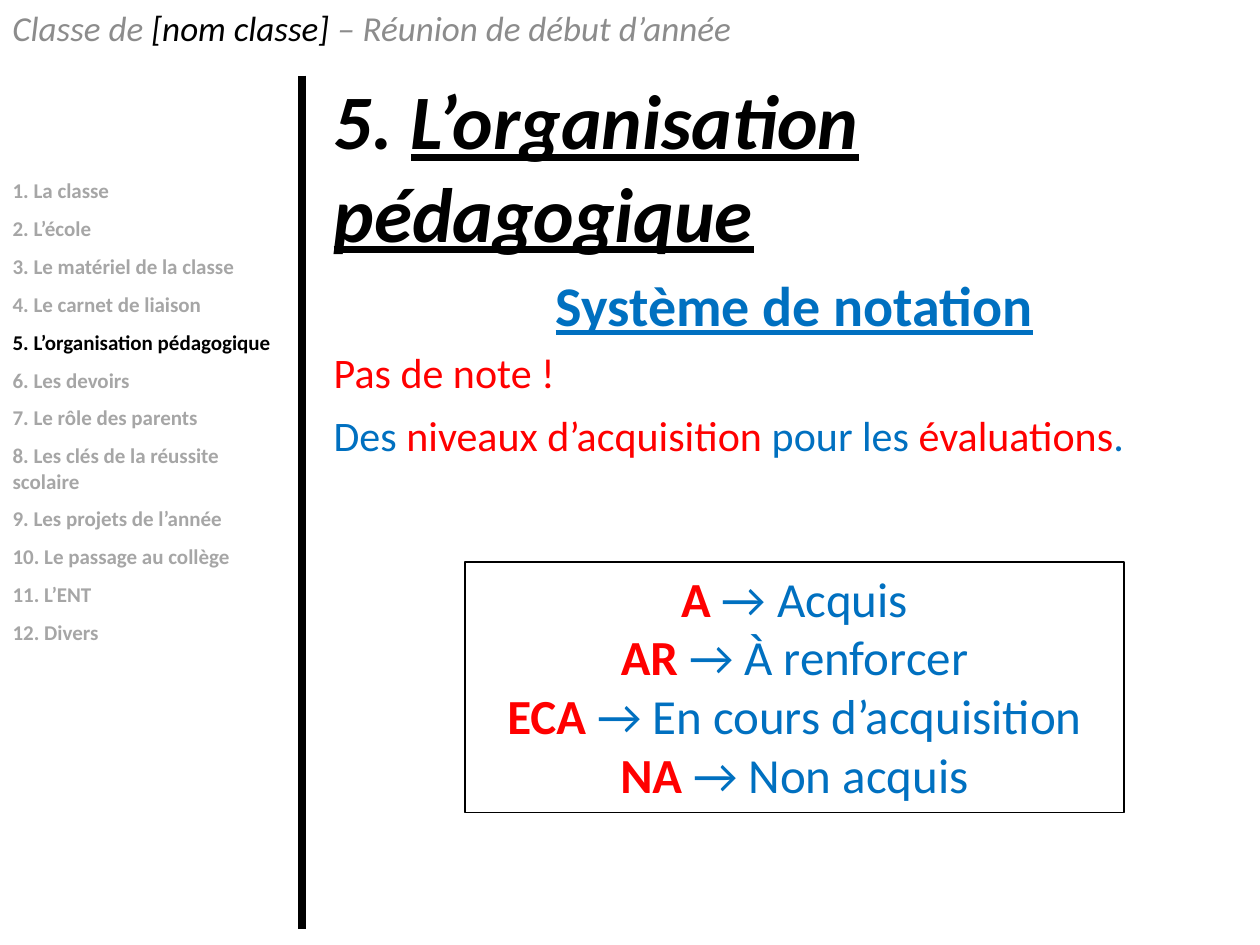
"""Builds a class meeting slide on the grading system, with a side menu."""
from dataclasses import dataclass

from lxml.etree import SubElement
from pptx import Presentation
from pptx.dml.color import RGBColor
from pptx.enum.shapes import MSO_CONNECTOR as Connector, MSO_SHAPE as Shape
from pptx.enum.text import MSO_ANCHOR as Anchor, PP_ALIGN as Align
from pptx.oxml.ns import qn
from pptx.util import Pt

BLACK = RGBColor(0x00, 0x00, 0x00)
BLUE = RGBColor(0x00, 0x70, 0xC0)
RED = RGBColor(0xFF, 0x00, 0x00)
GREY = RGBColor(0x8C, 0x8C, 0x8C)
PALE = RGBColor(0xA6, 0xA6, 0xA6)
FONT = "Calibri"

MENU = ["La classe", "L’école", "Le matériel de la classe", "Le carnet de liaison",
        "L’organisation pédagogique", "Les devoirs", "Le rôle des parents",
        "Les clés de la réussite scolaire", "Les projets de l’année",
        "Le passage au collège", "L’ENT", "Divers"]
CURRENT, TWO_LINES = 5, 8
LEVELS = [("A", "Acquis"), ("AR", "À renforcer"),
          ("ECA", "En cours d’acquisition"), ("NA", "Non acquis")]


@dataclass
class Span:
    """A stretch of text with one format."""
    text: str
    color: RGBColor = BLACK
    bold: bool = False
    italic: bool = False
    underline: bool = False


@dataclass
class Area:
    """A rectangle on the page, in points."""
    left: float
    top: float
    width: float
    height: float

    def lengths(self) -> list:
        """Return the four sides as lengths."""
        return [Pt(side) for side in (self.left, self.top, self.width, self.height)]


def write(frame, paragraphs: list[list[Span]], *, size: float, align=Align.LEFT,
          anchor=Anchor.TOP, before: float = 0) -> None:
    """Fill a text frame with formatted paragraphs."""
    frame.word_wrap = True
    frame.vertical_anchor = anchor
    for index, spans in enumerate(paragraphs):
        para = frame.add_paragraph() if index else frame.paragraphs[0]
        para.alignment = align
        para.space_before = Pt(before)
        for span in spans:
            run = para.add_run()
            run.text = span.text
            font = run.font
            font.name, font.size = FONT, Pt(size)
            font.bold, font.italic, font.underline = span.bold, span.italic, span.underline
            font.color.rgb = span.color


def add_text(page, area: Area, spans: list[Span], **style) -> None:
    """Add a one-paragraph text box."""
    box = page.shapes.add_textbox(*area.lengths())
    write(box.text_frame, [spans], **style)


def add_divider(page, x: float, top: float, bottom: float) -> None:
    """Draw the thick vertical line beside the menu."""
    line = page.shapes.add_connector(Connector.STRAIGHT, Pt(x), Pt(top), Pt(x), Pt(bottom))
    line.line.color.rgb = BLACK
    line.line.width = Pt(4.5)
    SubElement(line._element.spPr, qn("a:effectLst"))


def add_menu(page, area: Area) -> None:
    """Add the table of topics, with the current one in black."""
    table = page.shapes.add_table(len(MENU), 1, *area.lengths()).table
    table.first_row = table.horz_banding = False
    for number, topic in enumerate(MENU, 1):
        table.rows[number - 1].height = Pt(36 if number == TWO_LINES else 21.6)
        cell = table.cell(number - 1, 0)
        cell.fill.background()
        color = BLACK if number == CURRENT else PALE
        write(cell.text_frame, [[Span(f"{number}. {topic}", color, bold=True)]], size=12)
        cell.vertical_anchor = Anchor.MIDDLE


def add_levels(page, area: Area) -> None:
    """Add the framed list of grading levels."""
    box = page.shapes.add_shape(Shape.RECTANGLE, *area.lengths())
    box.shadow.inherit = False
    box.fill.background()
    box.line.color.rgb = BLACK
    box.line.width = Pt(0.75)
    lines = [[Span(code, RED, bold=True), Span(f" → {meaning}", BLUE)]
             for code, meaning in LEVELS]
    write(box.text_frame, lines, size=28, align=Align.CENTER)


def main() -> None:
    """Build the deck and save it."""
    deck = Presentation()
    deck.slide_width, deck.slide_height = Pt(720), Pt(540)
    page = deck.slides.add_slide(deck.slide_layouts[6])

    add_text(page, Area(183.6, 44.6, 536.4, 99.4),
             [Span("5. ", bold=True, italic=True),
              Span("L’organisation pédagogique", bold=True, italic=True, underline=True)],
             size=44, anchor=Anchor.MIDDLE)
    add_divider(page, 172.8, 43.2, 530.6)
    add_text(page, Area(188, 151.2, 532, 46),
             [Span("Système de notation", BLUE, bold=True, underline=True)],
             size=32, align=Align.CENTER)
    add_text(page, Area(0, 0, 462.2, 34.6),
             [Span("Classe de ", GREY, italic=True), Span("[nom classe] ", italic=True),
              Span("– Réunion de début d’année", GREY, italic=True)],
             size=20, before=4)
    add_menu(page, Area(0, 98.6, 162, 273.6))
    add_text(page, Area(183.6, 194.4, 536.4, 36), [Span("Pas de note !", RED)], size=24)
    add_text(page, Area(183.6, 230.4, 536.4, 36),
             [Span("Des ", BLUE), Span("niveaux d’acquisition", RED),
              Span(" pour les ", BLUE), Span("évaluations", RED), Span(".", BLUE)],
             size=24)
    add_levels(page, Area(265.7, 321.1, 376.6, 143.3))
    deck.save("out.pptx")


if __name__ == "__main__":
    main()
